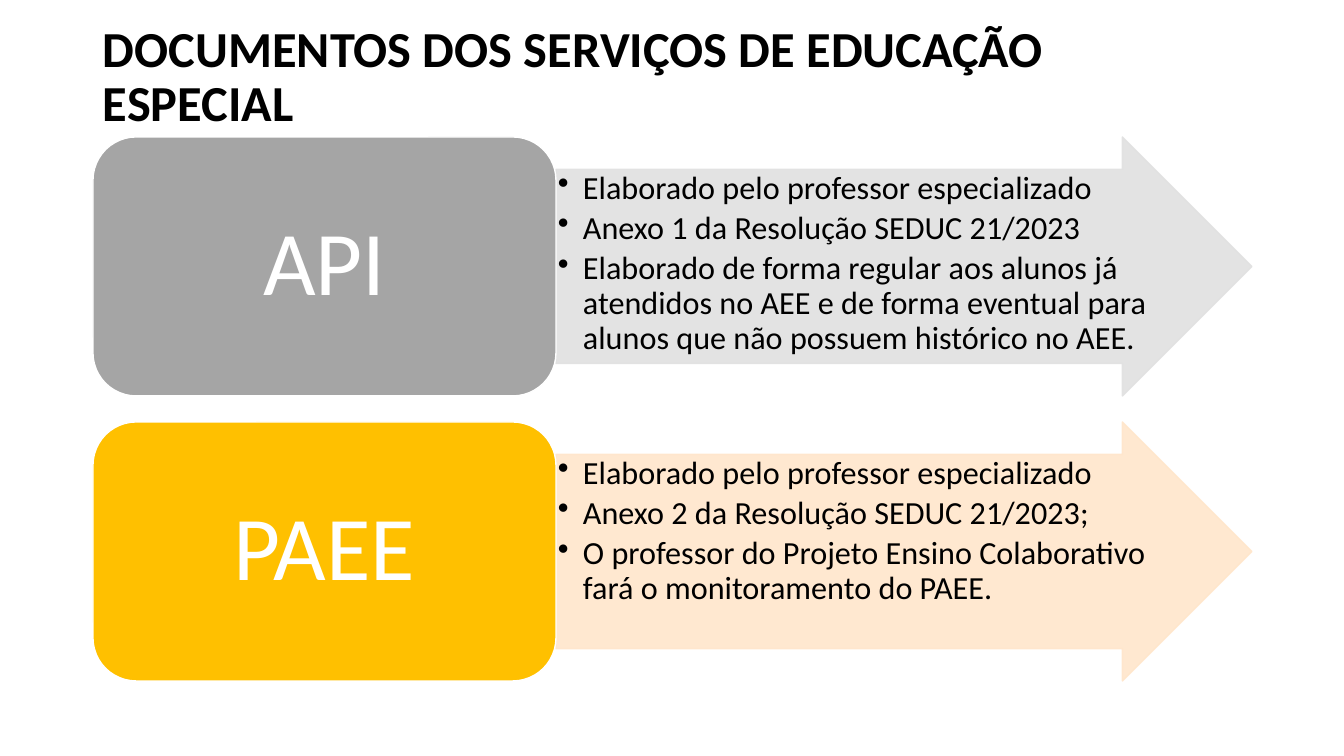
from lxml import etree
from pptx import Presentation
from pptx import util as u
from pptx.dml.color import RGBColor
from pptx.enum import shapes, text
from pptx.oxml.ns import qn

EMU_PER_PX = 914400 / 100.8
COLORS = {"black": "000000", "white": "FFFFFF", "gray": "A5A5A5",
          "pale gray": "E1E1E1", "gold": "FFC000", "pale gold": "FFE6CB"}
LEFT, TOP, ROW_STEP = 93, 137, 285
LABEL_W, ARROW_W, ROW_H = 463, 696, 259

DOCUMENTS = [
    ("API", "gray", "pale gray", [
        "Elaborado pelo professor especializado",
        "Anexo 1 da Resolução SEDUC 21/2023",
        "Elaborado de forma regular aos alunos já atendidos no AEE e de forma "
        "eventual para alunos que não possuem histórico no AEE."]),
    ("PAEE", "gold", "pale gold", [
        "Elaborado pelo professor especializado",
        "Anexo 2 da Resolução SEDUC 21/2023;",
        "O professor do Projeto Ensino Colaborativo fará o monitoramento do PAEE."]),
]


def px(length):
    return u.Emu(round(length * EMU_PER_PX))


def rgb(name):
    return RGBColor.from_string(COLORS[name])


class SlideBuilder:
    font = "Calibri"
    line_spacing = 0.9

    def __init__(self, slide):
        self.slide = slide

    def add_text(self, holder, lines, size, color="black", bold=False, bullet=False,
                 align=text.PP_ALIGN.LEFT, anchor=text.MSO_ANCHOR.TOP,
                 inset=(10, 5), space_after=0):
        frame = holder.text_frame
        frame.word_wrap = True
        frame.vertical_anchor = anchor
        frame.margin_left = frame.margin_right = px(inset[0])
        frame.margin_top = frame.margin_bottom = px(inset[1])
        for i, line in enumerate(lines):
            paragraph = frame.paragraphs[0] if i == 0 else frame.add_paragraph()
            paragraph.alignment = align
            paragraph.line_spacing = self.line_spacing
            paragraph.space_after = u.Pt(space_after)
            run = paragraph.add_run()
            run.text = line
            run.font.name, run.font.size, run.font.bold = self.font, u.Pt(size), bold
            run.font.color.rgb = rgb(color)
            if bullet:
                self.add_bullet(paragraph)

    def add_bullet(self, paragraph):
        props = paragraph._p.get_or_add_pPr()
        props.set("marL", str(px(25)))
        props.set("indent", str(px(-25)))
        etree.SubElement(props, qn("a:buChar")).set("char", "•")

    def title(self, heading, left, top, width, height):
        box = self.slide.shapes.add_textbox(*map(px, (left, top, width, height)))
        self.add_text(box, [heading], 36, bold=True, anchor=text.MSO_ANCHOR.MIDDLE)

    def block(self, preset, left, top, width, height, fill, line, opacity=100):
        block = self.slide.shapes.add_shape(
            preset, *map(px, (left, top, width, height)))
        block.shadow.inherit = False
        block.fill.solid()
        block.fill.fore_color.rgb = rgb(fill)
        block.line.color.rgb = rgb(line)
        block.line.width = u.Pt(1)
        if opacity < 100:
            for color in block._element.spPr.iter(qn("a:srgbClr")):
                etree.SubElement(color, qn("a:alpha")).set("val", str(opacity * 1000))
        return block

    def arrow(self, lines, left, top, fill):
        arrow = self.block(shapes.MSO_SHAPE.RIGHT_ARROW, left, top, ARROW_W, ROW_H,
                           fill, fill, opacity=90)
        arrow.adjustments[0], arrow.adjustments[1] = 0.75, 0.5
        self.add_text(arrow, lines, 23, bullet=True, inset=(2, 2), space_after=4)

    def label(self, name, left, top, fill):
        label = self.block(shapes.MSO_SHAPE.ROUNDED_RECTANGLE, left, top,
                           LABEL_W, ROW_H, fill, "white")
        self.add_text(label, [name], 65, color="white", align=text.PP_ALIGN.CENTER,
                      anchor=text.MSO_ANCHOR.MIDDLE, inset=(27, 14))


def main():
    deck = Presentation()
    deck.slide_width, deck.slide_height = px(1344), px(756)
    builder = SlideBuilder(deck.slides.add_slide(deck.slide_layouts[6]))
    builder.title("DOCUMENTOS DOS SERVIÇOS DE EDUCAÇÃO ESPECIAL",
                  LEFT, 40, LABEL_W + ARROW_W, 76)
    for row, (name, fill, pale_fill, details) in enumerate(DOCUMENTS):
        top = TOP + row * ROW_STEP
        builder.arrow(details, LEFT + LABEL_W, top, pale_fill)
        builder.label(name, LEFT, top, fill)
    deck.save("out.pptx")


if __name__ == "__main__":
    main()
